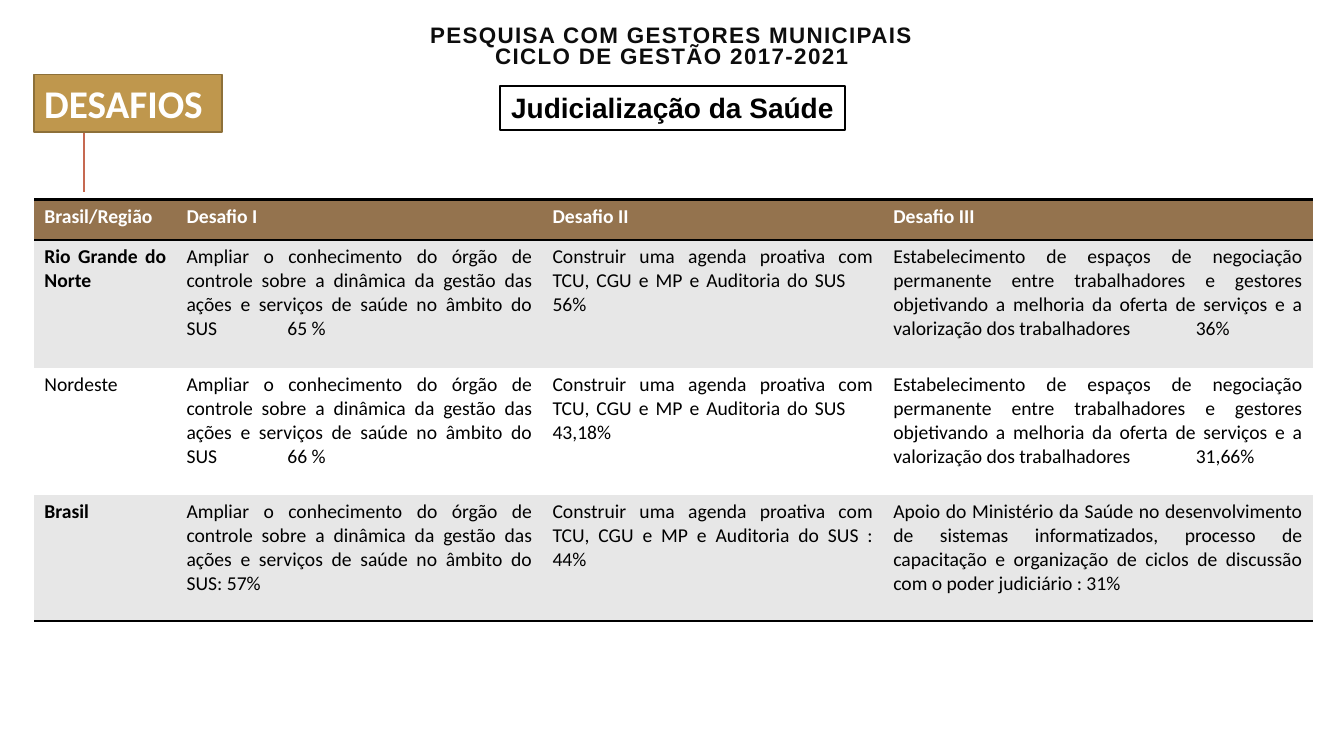
from lxml import etree
from pptx import Presentation
from pptx import util as u
from pptx.dml.color import RGBColor
from pptx.enum import shapes, text
from pptx.oxml import ns

BLACK = RGBColor(0x00, 0x00, 0x00)
INK = RGBColor(0x0D, 0x0D, 0x0D)
WHITE = RGBColor(0xFF, 0xFF, 0xFF)
GOLD = RGBColor(0xBF, 0x97, 0x4D)
DARK_GOLD = RGBColor(0x8D, 0x70, 0x39)
BROWN = RGBColor(0x94, 0x73, 0x4E)
GREY = RGBColor(0xE7, 0xE7, 0xE7)
RUST = RGBColor(0xC6, 0x69, 0x51)

ALIGN = text.PP_ALIGN
ORGAO = ("Ampliar o conhecimento do órgão de controle sobre a dinâmica da gestão "
         "das ações e serviços de saúde no âmbito do SUS")
AGENDA = "Construir uma agenda proativa com TCU, CGU e MP e Auditoria do SUS"
NEGOCIACAO = ("Estabelecimento de espaços de negociação permanente entre trabalhadores e "
              "gestores objetivando a melhoria da oferta de serviços e a valorização "
              "dos trabalhadores")
APOIO = ("Apoio do Ministério da Saúde no desenvolvimento de sistemas informatizados, "
         "processo de capacitação e organização de ciclos de discussão com o poder "
         "judiciário : 31%")
DESAFIOS = [
    ["Brasil/Região", "Desafio I", "Desafio II", "Desafio III"],
    ["Rio Grande do Norte", ORGAO + "\t65 %", AGENDA + "\t56%", NEGOCIACAO + "\t36%"],
    ["Nordeste", ORGAO + "\t66 %", AGENDA + "\t43,18%", NEGOCIACAO + "\t31,66%"],
    ["Brasil", ORGAO + ": 57%", AGENDA + " : 44%", APOIO],
]
BOLD_REGIONS = ("Rio Grande do Norte", "Brasil")


def inches(*lengths):
    return [u.Inches(length) for length in lengths]


def child(parent, tag, **attributes):
    return etree.SubElement(parent, ns.qn(tag), attributes)


class SlideBuilder:
    def __init__(self, slide):
        self.slide = slide
        self.heading = {"name": "Arial", "bold": True}
        self.body = {"name": "Calibri", "size": u.Pt(14)}

    def set_words(self, frame, words, color, align, **font):
        frame.text = words
        for paragraph in frame.paragraphs:
            paragraph.alignment = align
            for run in paragraph.runs:
                for key, value in font.items():
                    setattr(run.font, key, value)
                run.font.color.rgb = color

    def title(self, words, box):
        title = self.slide.shapes.title
        title.left, title.top, title.width, title.height = inches(*box)
        frame = title.text_frame
        self.set_words(frame, words, INK, ALIGN.CENTER, size=u.Pt(16), **self.heading)
        frame.auto_size = text.MSO_AUTO_SIZE.NONE
        frame.vertical_anchor = text.MSO_ANCHOR.MIDDLE
        frame.paragraphs[0].line_spacing = 0.8
        for run in frame.paragraphs[0].runs:
            run.font._element.set("spc", "100")

    def label(self, words, box, fill, outline, color, align, **font):
        label = self.slide.shapes.add_shape(shapes.MSO_SHAPE.RECTANGLE, *inches(*box))
        label.shadow.inherit = False
        label.fill.solid()
        label.fill.fore_color.rgb = fill
        label.line.color.rgb = outline
        label.line.width = u.Pt(1.25)
        label.text_frame.word_wrap = True
        label.text_frame.vertical_anchor = text.MSO_ANCHOR.TOP
        self.set_words(label.text_frame, words, color, align, **font)

    def line(self, ends, color, width):
        line = self.slide.shapes.add_connector(shapes.MSO_CONNECTOR.STRAIGHT, *inches(*ends))
        line.line.color.rgb = color
        line.line.width = u.Pt(width)
        child(line._element.spPr, "a:effectLst")

    def borders(self, cell, ruled):
        properties = cell._tc.get_or_add_tcPr()
        for side in "LRTB":
            if side in ruled:
                edge = child(properties, f"a:ln{side}", w=str(u.Pt(2)))
                child(child(edge, "a:solidFill"), "a:srgbClr", val=str(BLACK))
            else:
                child(child(properties, f"a:ln{side}", w="0"), "a:noFill")

    def tab_stops(self, paragraph):
        stops = child(paragraph._p.get_or_add_pPr(), "a:tabLst")
        for position in inches(1, 2, 3):
            child(stops, "a:tab", pos=str(position), algn="l")

    def table(self, rows, left, top, widths, heights):
        table = self.slide.shapes.add_table(
            len(rows), len(widths), *inches(left, top, sum(widths), sum(heights))).table
        table.first_row = table.horz_banding = False
        for column, width in zip(table.columns, widths):
            column.width = u.Inches(width)
        for row, height in zip(table.rows, heights):
            row.height = u.Inches(height)
        ruled = {0: "TB", 1: "T", len(rows) - 1: "B"}
        for r, row in enumerate(rows):
            for c, words in enumerate(row):
                cell = table.cell(r, c)
                self.borders(cell, ruled.get(r, ""))
                cell.fill.solid()
                cell.fill.fore_color.rgb = BROWN if r == 0 else (WHITE, GREY)[r % 2]
                self.set_words(cell.text_frame, words, BLACK if r else WHITE, ALIGN.JUSTIFY,
                               bold=r == 0 or words in BOLD_REGIONS, **self.body)
                if "\t" in words:
                    self.tab_stops(cell.text_frame.paragraphs[0])


def main():
    deck = Presentation()
    deck.slide_width, deck.slide_height = inches(13.33, 7.5)
    page = SlideBuilder(deck.slides.add_slide(deck.slide_layouts[5]))
    page.line((0.83, 1.9, 0.83, 0.9), RUST, 1.5)
    page.title("PESQUISA COM GESTORES MUNICIPAIS\vCICLO DE GESTÃO 2017-2021",
               (1.35, 0.05, 10.63, 0.84))
    page.label("Judicialização da Saúde", (4.96, 0.85, 3.42, 0.44), WHITE, BLACK, BLACK,
               ALIGN.CENTER, size=u.Pt(20), **page.heading)
    page.label("DESAFIOS", (0.34, 0.74, 1.86, 0.57), GOLD, DARK_GOLD, WHITE,
               ALIGN.LEFT, name="Calibri", size=u.Pt(28), bold=True)
    page.table(DESAFIOS, 0.34, 1.98, (1.41, 3.63, 3.38, 4.26), (0.4, 1.27, 1.26, 1.25))
    deck.save("out.pptx")


if __name__ == "__main__":
    main()
